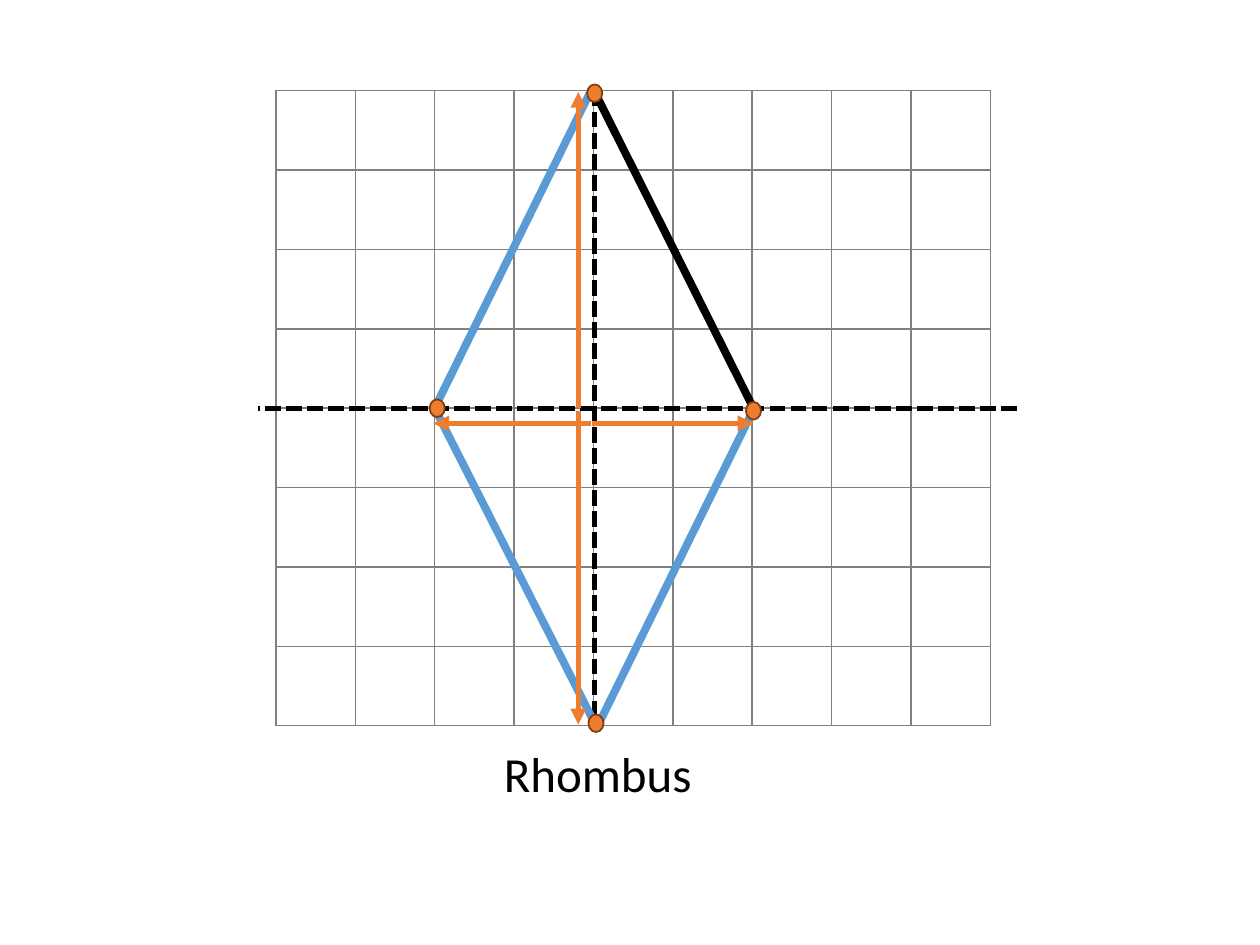
from lxml import etree
from pptx import Presentation
from pptx.dml.color import RGBColor
from pptx.enum.dml import MSO_LINE
from pptx.enum.shapes import MSO_CONNECTOR, MSO_SHAPE
from pptx.enum.text import PP_ALIGN
from pptx.oxml.ns import qn
from pptx.util import Inches, Pt

BLACK = RGBColor(0x00, 0x00, 0x00)
GRAY = RGBColor(0x80, 0x80, 0x80)
BLUE = RGBColor(0x5B, 0x9B, 0xD5)
ORANGE = RGBColor(0xED, 0x7D, 0x31)
BROWN = RGBColor(0x84, 0x3C, 0x0B)

ROWS, COLS, CELL = 8, 9, 0.63


def set_borders(cell, color, width):
    pr = cell._tc.get_or_add_tcPr()
    for i, side in enumerate(("a:lnL", "a:lnR", "a:lnT", "a:lnB")):
        ln = etree.Element(qn(side), w=str(Pt(width)))
        fill = etree.SubElement(ln, qn("a:solidFill"))
        etree.SubElement(fill, qn("a:srgbClr"), val=str(color))
        pr.insert(i, ln)


def add_grid(s, left, top):
    tbl = s.shapes.add_table(ROWS, COLS, Inches(left), Inches(top),
                             Inches(COLS * CELL), Inches(ROWS * CELL)).table
    tbl.first_row = False
    tbl.horz_banding = False
    for col in tbl.columns:
        col.width = Inches(CELL)
    for row in tbl.rows:
        row.height = Inches(CELL)
        for cell in row.cells:
            cell.fill.background()
            set_borders(cell, GRAY, 1)


def add_line(s, cx, cy, start, end, color, width, dashed=False, arrow=False):
    ln = s.shapes.add_connector(
        MSO_CONNECTOR.STRAIGHT,
        Inches(cx + start[0]), Inches(cy + start[1]),
        Inches(cx + end[0]), Inches(cy + end[1]))
    ln.line.color.rgb = color
    ln.line.width = Pt(width)
    if dashed:
        ln.line.dash_style = MSO_LINE.SQUARE_DOT
    if arrow:
        etree.SubElement(ln.line._get_or_add_ln(), qn("a:tailEnd"), type="triangle")
    etree.SubElement(ln._element.spPr, qn("a:effectLst"))


def add_vertex(s, x, y, width=0.12, height=0.14):
    sp = s.shapes.add_shape(MSO_SHAPE.OVAL, Inches(x - width / 2), Inches(y - height / 2),
                            Inches(width), Inches(height))
    sp.shadow.inherit = False
    sp.fill.solid()
    sp.fill.fore_color.rgb = ORANGE
    sp.line.color.rgb = BROWN
    sp.line.width = Pt(1)


def add_rhombus(s, cx, cy):
    axes = [((3.35, 0), (-2.67, 0)), ((0, -2.52), (0, 2.51))]
    sides = [
        ((1.26, 0), (0, -2.51), BLACK),
        ((-1.27, 0), (-0.03, -2.52), BLUE),
        ((0.02, 2.53), (1.26, 0.01), BLUE),
        ((0.02, 2.54), (-1.26, 0.02), BLUE),
    ]
    arrows = [
        ((-0.13, 0), (-0.13, -2.51)),
        ((-0.13, 0.02), (-0.13, 2.51)),
        ((-0.03, 0.12), (-1.28, 0.12)),
        ((-0.02, 0.12), (1.26, 0.12)),
    ]
    vertices = [(0, -2.5), (0.01, 2.5), (1.26, 0.02), (-1.25, 0)]
    for start, end in axes:
        add_line(s, cx, cy, start, end, BLACK, 3, dashed=True)
    for start, end, color in sides:
        add_line(s, cx, cy, start, end, color, 4.5)
    for start, end in arrows:
        add_line(s, cx, cy, start, end, ORANGE, 3, arrow=True)
    for dx, dy in vertices:
        add_vertex(s, cx + dx, cy + dy)


def add_caption(s, left, top, width, height):
    tf = s.shapes.add_textbox(Inches(left), Inches(top),
                              Inches(width), Inches(height)).text_frame
    tf.word_wrap = False
    tf.text = "Rhombus"
    p = tf.paragraphs[0]
    p.alignment = PP_ALIGN.LEFT
    p.font.name = "Calibri"
    p.font.size = Pt(28)
    p.font.color.rgb = BLACK


def main():
    prs = Presentation()
    prs.slide_width, prs.slide_height = Inches(10), Inches(7.5)
    s = prs.slides.add_slide(prs.slide_layouts[6])
    add_grid(s, 2.19, 0.72)
    add_rhombus(s, 4.72, 3.24)
    add_caption(s, 3.9, 5.85, 1.71, 0.57)
    prs.save("out.pptx")


if __name__ == "__main__":
    main()
